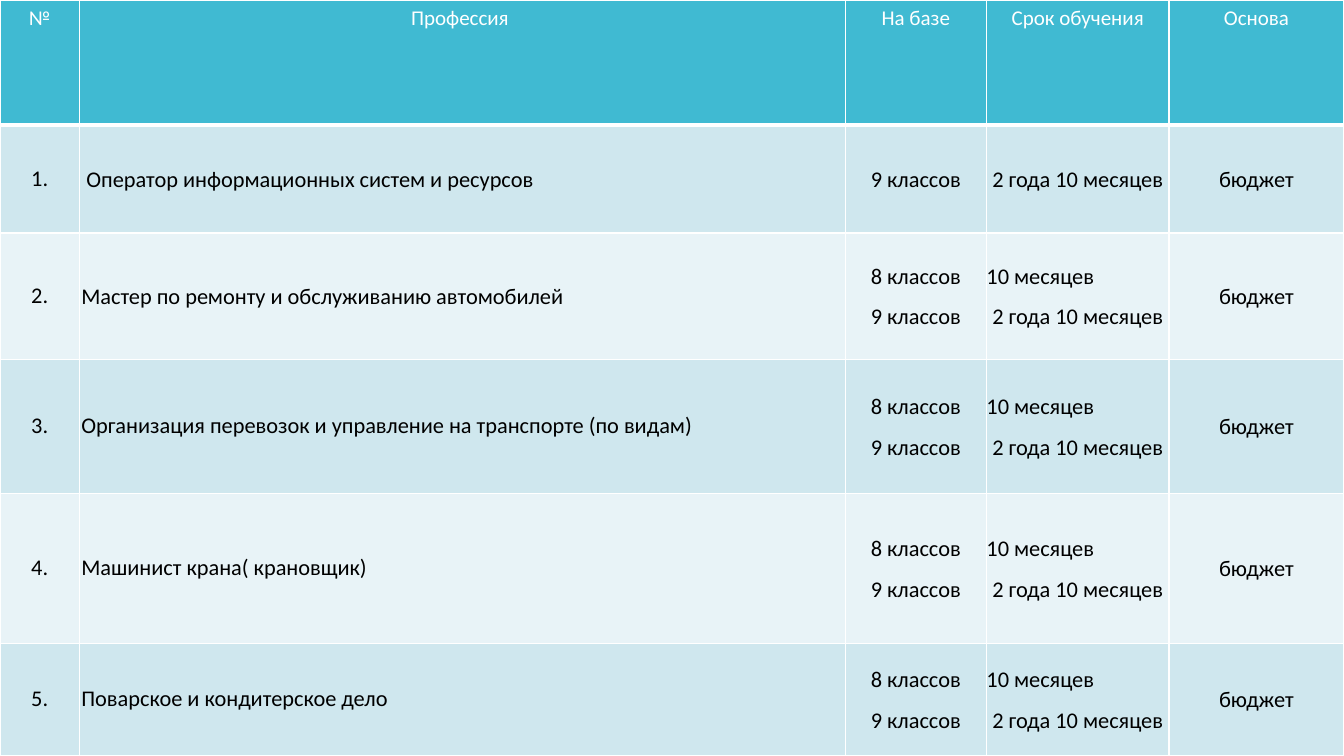
"""Build a slide with a table of professions, entry levels and study terms."""
import pptx
import pptx.dml.color
import pptx.enum.text
import pptx.oxml
import pptx.oxml.ns
import pptx.util

Cm, Pt = pptx.util.Cm, pptx.util.Pt
RGB = pptx.dml.color.RGBColor.from_string
ALIGN = pptx.enum.text.PP_ALIGN
ANCHOR = pptx.enum.text.MSO_ANCHOR

COLORS = {"header": "40BAD2", "odd": "CFE7EE", "even": "E8F3F7", "white": "FFFFFF", "black": "000000"}
COL_WIDTHS = [2, 19.3, 3.56, 4.6, 4.41]
ROW_HEIGHTS = [3.15, 2.72, 3.18, 3.38, 3.78, 2.82]
HEADERS = ["№", "Профессия ", "На базе", "Срок обучения", "Основа"]
PROFESSIONS = [
    " Оператор информационных систем и ресурсов",
    "Мастер по ремонту и обслуживанию автомобилей",
    "Организация перевозок и управление на транспорте (по видам)",
    "Машинист крана( крановщик)",
    "Поварское и кондитерское дело",
]
LEVELS = ["8 классов", "9 классов"]
TERMS = ["10 месяцев", "2 года 10 месяцев"]


def add_borders(cell, bottom):
    tcPr = cell._tc.get_or_add_tcPr()
    widths = {"lnL": 1, "lnR": 1, "lnT": 1, "lnB": bottom}
    for i, (side, width) in enumerate(widths.items()):
        tcPr.insert(i, pptx.oxml.parse_xml(
            f'<a:{side} {pptx.oxml.ns.nsdecls("a")} w="{Pt(width)}"><a:solidFill>'
            f'<a:srgbClr val="{COLORS["white"]}"/></a:solidFill></a:{side}>'))


def fill_cell(cell, lines, fill, color, size):
    cell.fill.solid()
    cell.fill.fore_color.rgb = RGB(COLORS[fill])
    tf = cell.text_frame
    tf.text = "\n".join(lines)
    for p in tf.paragraphs:
        p.alignment = ALIGN.CENTER
        p.font.name = "Calibri"
        p.font.size = Pt(size)
        p.font.bold = False
        p.font.color.rgb = RGB(COLORS[color])


prs = pptx.Presentation()
prs.slide_width, prs.slide_height = Cm(33.87), Cm(19.05)
s = prs.slides.add_slide(prs.slide_layouts[6])

table = s.shapes.add_table(len(ROW_HEIGHTS), len(COL_WIDTHS), 0, 0,
                           Cm(sum(COL_WIDTHS)), Cm(sum(ROW_HEIGHTS))).table
for col, width in zip(table.columns, COL_WIDTHS):
    col.width = Cm(width)
for row, height in zip(table.rows, ROW_HEIGHTS):
    row.height = Cm(height)

for c, header in enumerate(HEADERS):
    cell = table.cell(0, c)
    fill_cell(cell, [header], "header", "white", 15)
    add_borders(cell, 3)

for r, profession in enumerate(PROFESSIONS, 1):
    first = 1 if r == 1 else 0
    values = [[f"{r}."], [profession], LEVELS[first:], TERMS[first:], ["бюджет"]]
    for c, lines in enumerate(values):
        cell = table.cell(r, c)
        fill_cell(cell, lines, "odd" if r % 2 else "even", "black", 16)
        add_borders(cell, 1)
        cell.vertical_anchor = ANCHOR.MIDDLE
        if c > 0:
            inset = Cm(0.05 if c == 1 else 0)
            cell.margin_left = cell.margin_right = inset
            cell.margin_top = cell.margin_bottom = inset
        for p in cell.text_frame.paragraphs:
            if c > 1 or c == 1 and r < 3:
                p.line_spacing = 1.07
                p.space_after = Pt(8)
            if c == 1 or p.text == TERMS[0]:
                p.alignment = ALIGN.LEFT

prs.save("out.pptx")
